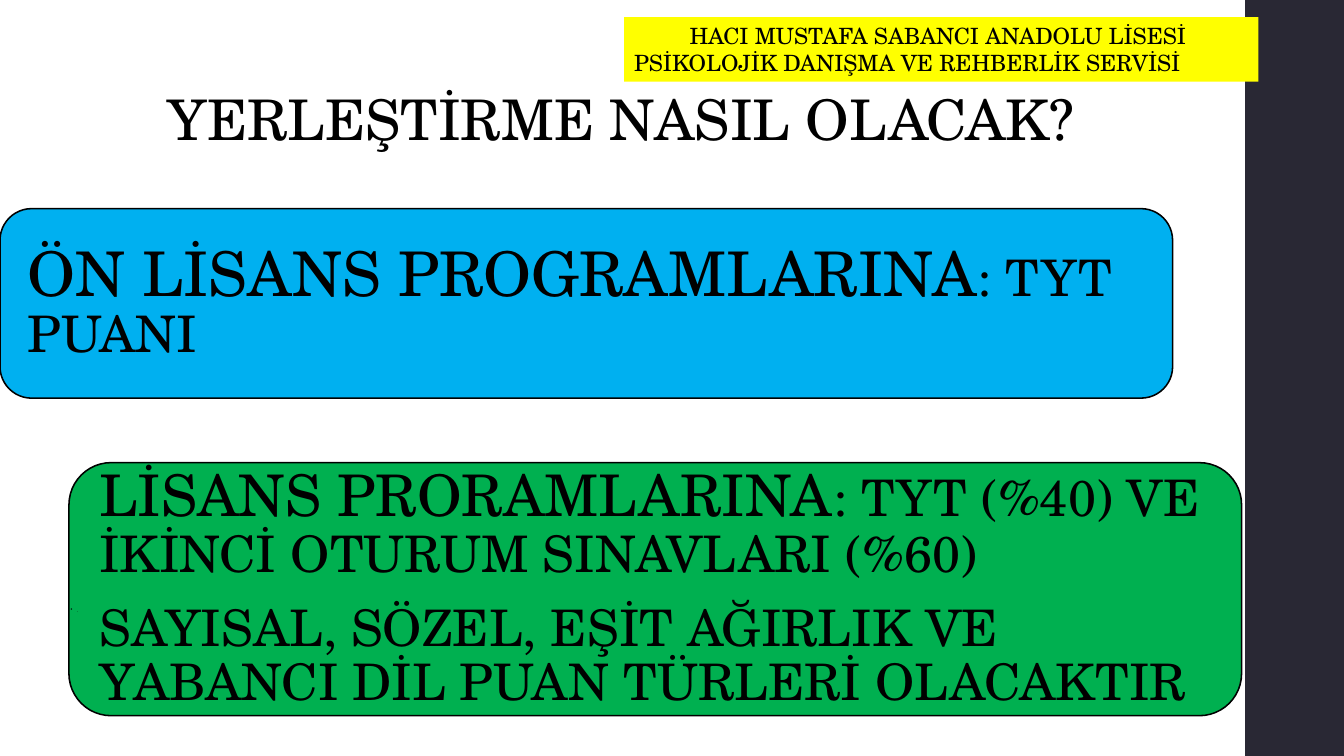
from dataclasses import dataclass
from lxml import etree
from pptx import Presentation, util as u
from pptx.dml.color import RGBColor
from pptx.enum import shapes, text
from pptx.oxml import ns

FONT = "TeX Gyre Schola"
HEX = {"dark": "292834", "blue": "00B0F0", "green": "00B050",
       "white": "FFFFFF", "yellow": "FFFF00", "black": "000000"}
RECT = shapes.MSO_SHAPE.RECTANGLE
ROUND = shapes.MSO_SHAPE.ROUNDED_RECTANGLE
MID, TOP = text.MSO_ANCHOR.MIDDLE, text.MSO_ANCHOR.TOP
LEFT, CENTER = text.PP_ALIGN.LEFT, text.PP_ALIGN.CENTER
WIDE, HIGH = u.Inches(13.33), u.Inches(7.5)


@dataclass
class Para:
    runs: list[tuple[str, int]]  # wording and size in points
    indent: float = 0            # first line, inches
    bullet: str = ""


@dataclass
class Box:
    area: tuple[float, float, float, float]  # percent of the slide
    fill: str = ""
    paras: tuple[Para, ...] = ()
    kind: int = RECT
    edge: bool = False
    inset: tuple[float, float] = (0.1, 0.05)  # side, top and bottom
    anchor: int = TOP
    align: int = LEFT
    line: float = 1.0
    after: float = 0


def color(name: str) -> RGBColor:
    return RGBColor.from_string(HEX[name])


def write(para, item: Para, box: Box) -> None:
    props = para._p.get_or_add_pPr()
    if item.indent:
        props.set("indent", str(u.Inches(item.indent)))
    if item.bullet:
        props.set("marL", str(u.Inches(abs(item.indent))))
        etree.SubElement(props, ns.qn("a:buChar")).set("char", item.bullet)
    para.alignment, para.line_spacing = box.align, box.line
    para.space_after = u.Pt(box.after)
    for words, size in item.runs:
        run = para.add_run()
        run.text = words
        run.font.size, run.font.name = u.Pt(size), FONT
        run.font.color.rgb = color("black")


def draw(slide, box: Box) -> None:
    x, y, w, h = box.area
    shape = slide.shapes.add_shape(
        box.kind, int(WIDE * x / 100), int(HIGH * y / 100),
        int(WIDE * w / 100), int(HIGH * h / 100))
    shape.shadow.inherit = False
    if box.fill:
        shape.fill.solid()
        shape.fill.fore_color.rgb = color(box.fill)
    else:
        shape.fill.background()
    if box.edge:
        shape.line.color.rgb = color("black")
        shape.line.width = u.Pt(1.1)
    else:
        shape.line.fill.background()
    frame = shape.text_frame
    frame.word_wrap, frame.vertical_anchor = True, box.anchor
    side, rim = map(u.Inches, box.inset)
    frame.margin_left = frame.margin_right = side
    frame.margin_top = frame.margin_bottom = rim
    for n, item in enumerate(box.paras):
        write(frame.add_paragraph() if n else frame.paragraphs[0], item, box)


def card(area, fill: str, *paras: Para) -> Box:
    return Box(area, fill, paras, ROUND, True, (0.18, 0.18), MID,
               line=0.9, after=14)


BOXES = [
    # Side band
    Box((92.65, 0, 7.5, 100), "dark"),
    # Programme cards
    card((0, 27.6, 87.25, 25.07), "blue",
         Para([("ÖN LİSANS PROGRAMLARINA", 44), (": TYT PUANI", 36)])),
    card((5.13, 61.2, 87.25, 33.47), "green",
         Para([("LİSANS PRORAMLARINA", 41),
               (": TYT (%40) VE İKİNCİ OTURUM SINAVLARI (%60)", 36)]),
         Para([("SAYISAL, SÖZEL, EŞİT AĞIRLIK VE YABANCI DİL "
                "PUAN TÜRLERİ OLACAKTIR", 36)])),
    # Tiny bullet line
    Box((2.48, 80.27, 87.25, 1.2), "", (Para([(".", 4)], -0.06, "•"),),
        inset=(0.37, 0.01), line=0.9),
    # Title and school label
    Box((0, 10.53, 92.42, 10.27), "white",
        (Para([("YERLEŞTİRME NASIL OLACAK?", 40)]),), align=CENTER),
    Box((46.44, 2.27, 47.19, 8.53), "yellow",
        (Para([("HACI MUSTAFA SABANCI ANADOLU LİSESİ", 16)], 0.55),
         Para([("PSİKOLOJİK DANIŞMA VE REHBERLİK SERVİSİ", 16)]))),
]


def main() -> None:
    deck = Presentation()
    deck.slide_width, deck.slide_height = WIDE, HIGH
    slide = deck.slides.add_slide(deck.slide_layouts[6])
    for box in BOXES:
        draw(slide, box)
    deck.save("out.pptx")


if __name__ == "__main__":
    main()
